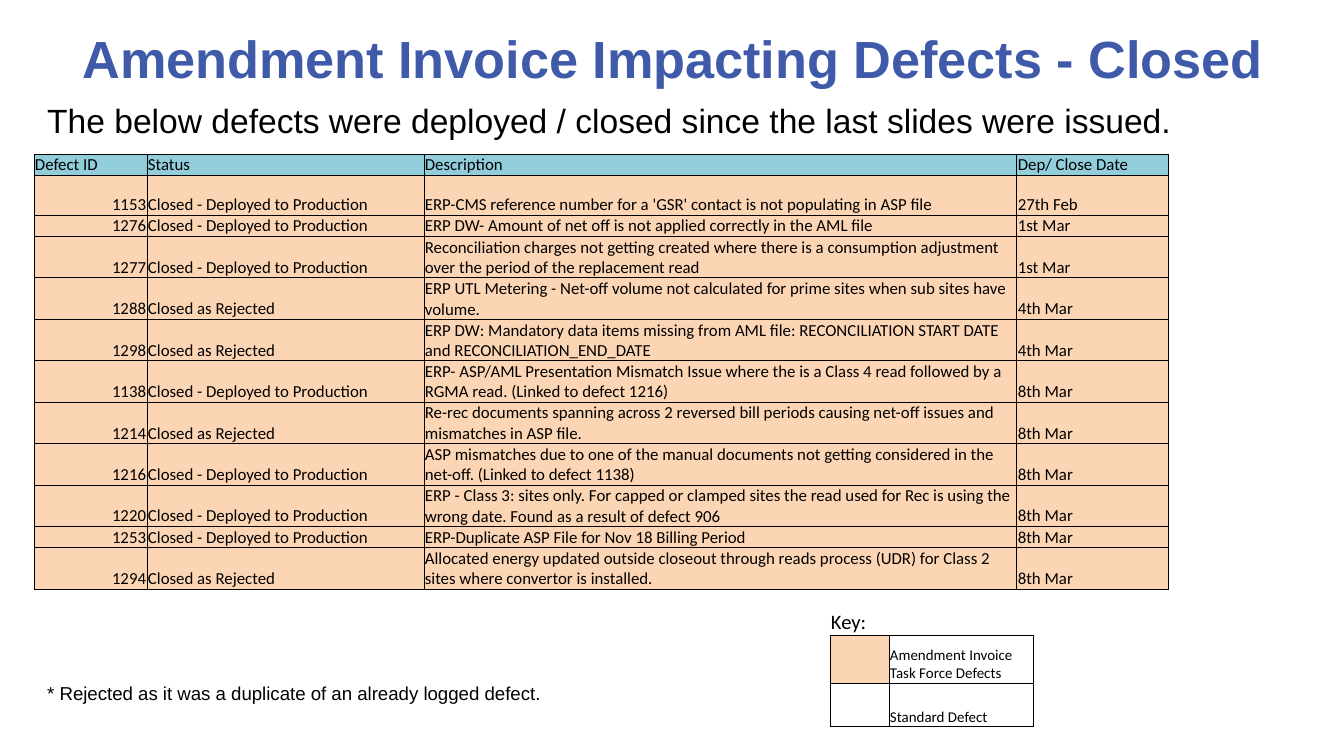
from lxml.etree import SubElement
from pptx import Presentation
from pptx.dml.color import RGBColor
from pptx.enum.text import MSO_ANCHOR, PP_ALIGN
from pptx.oxml.ns import qn
from pptx.util import Emu, Pt

PX = 914400 / 134.4
BLUE = RGBColor(0x3E, 0x5A, 0xA8)
BLACK = RGBColor(0, 0, 0)
WHITE = RGBColor(0xFF, 0xFF, 0xFF)
TEAL = RGBColor(0x92, 0xCD, 0xDC)
PEACH = RGBColor(0xFC, 0xD5, 0xB4)

TITLE = "Amendment Invoice Impacting Defects - Closed"
INTRO = "The below defects were deployed / closed since the last slides were issued."
FOOTNOTE = "* Rejected as it was a duplicate of an already logged defect."

DEPLOYED = "Closed - Deployed to Production"
REJECTED = "Closed as Rejected"
HEADER = ("Defect ID", "Status", "Description", "Dep/ Close Date")
DEFECTS = [
    ("1153", DEPLOYED, "ERP-CMS reference number for a 'GSR' contact is not populating in ASP file", "27th Feb"),
    ("1276", DEPLOYED, "ERP DW- Amount of net off is not applied correctly in the AML file", "1st Mar"),
    ("1277", DEPLOYED, "Reconciliation charges not getting created where there is a consumption "
     "adjustment over the period of the replacement read", "1st Mar"),
    ("1288", REJECTED, "ERP UTL Metering - Net-off volume not calculated for prime sites when "
     "sub sites have volume.", "4th Mar"),
    ("1298", REJECTED, "ERP DW: Mandatory data items missing from AML file: RECONCILIATION START DATE "
     "and RECONCILIATION_END_DATE", "4th Mar"),
    ("1138", DEPLOYED, "ERP- ASP/AML Presentation Mismatch Issue where the is a Class 4 read followed "
     "by a RGMA read. (Linked to defect 1216)", "8th Mar"),
    ("1214", REJECTED, "Re-rec documents spanning across 2 reversed bill periods causing net-off "
     "issues and mismatches in ASP file.", "8th Mar"),
    ("1216", DEPLOYED, "ASP mismatches due to one of the manual documents not getting considered in "
     "the net-off. (Linked to defect 1138)", "8th Mar"),
    ("1220", DEPLOYED, "ERP - Class 3: sites only. For capped or clamped sites the read used for Rec "
     "is using the wrong date. Found as a result of defect 906", "8th Mar"),
    ("1253", DEPLOYED, "ERP-Duplicate ASP File for Nov 18 Billing Period", "8th Mar"),
    ("1294", REJECTED, "Allocated energy updated outside closeout through reads process (UDR) for "
     "Class 2 sites where convertor is installed.", "8th Mar"),
]
DEFECT_COLS = (113, 277, 593, 152)
SHORT_ROWS = ("Defect ID", "1276", "1253")

KEY_ROWS = [("Key:", ""), ("", "Amendment Invoice Task Force Defects"), ("", "Standard Defect")]
KEY_COLS = (59, 144)
KEY_HEIGHTS = (26, 48, 44)


def px(n):
    return Emu(round(n * PX))


def style(p, size, font, color=BLACK, bold=False):
    for r in p.runs:
        r.font.size, r.font.name, r.font.bold = Pt(size), font, bold
        r.font.color.rgb = color


def add_text(slide, text, box, size, color=BLACK, bold=False, wrap=True):
    tf = slide.shapes.add_textbox(*map(px, box)).text_frame
    tf.word_wrap = wrap
    tf.text = text
    style(tf.paragraphs[0], size, "Arial", color, bold)
    return tf


def set_borders(cell, sides):
    """Draw a thin black line on the given sides and none on the others."""
    tc_pr = cell._tc.get_or_add_tcPr()
    for i, side in enumerate("LRTB"):
        ln = tc_pr.makeelement(qn(f"a:ln{side}"), {"w": str(Pt(0.5))})
        if side in sides:
            fill = SubElement(ln, qn("a:solidFill"))
            SubElement(fill, qn("a:srgbClr"), val=str(BLACK))
        else:
            SubElement(ln, qn("a:noFill"))
        tc_pr.insert(i, ln)


def fill_cell(cell, text, size, color, sides="LRTB"):
    cell.margin_left = cell.margin_right = cell.margin_top = px(1)
    cell.margin_bottom = 0
    cell.vertical_anchor = MSO_ANCHOR.BOTTOM
    p = cell.text_frame.paragraphs[0]
    if text:
        p.text = text
        style(p, size, "Calibri")
    else:
        SubElement(p._p, qn("a:endParaRPr"), sz=str(size * 100))
    if color is None:
        cell.fill.background()
    else:
        cell.fill.solid()
        cell.fill.fore_color.rgb = color
    set_borders(cell, sides)
    return p


def add_grid(slide, left, top, cols, heights):
    frame = slide.shapes.add_table(len(heights), len(cols), px(left), px(top),
                                   px(sum(cols)), px(sum(heights)))
    table = frame.table
    table.first_row = table.horz_banding = False
    for column, width in zip(table.columns, cols):
        column.width = px(width)
    for row, height in zip(table.rows, heights):
        row.height = px(height)
    return table


prs = Presentation()
prs.slide_width, prs.slide_height = px(1344), px(756)
slide = prs.slides.add_slide(prs.slide_layouts[6])

title = add_text(slide, TITLE, (34, 5, 1277, 106), 28, BLUE, bold=True)
title.margin_left = title.margin_right = title.margin_top = title.margin_bottom = 0
title.vertical_anchor = MSO_ANCHOR.MIDDLE
title.paragraphs[0].alignment = PP_ALIGN.CENTER
add_text(slide, INTRO, (34, 93, 1277, 52), 18)

key = add_grid(slide, 830, 609, KEY_COLS, KEY_HEIGHTS)
for i, row in enumerate(KEY_ROWS):
    for j, text in enumerate(row):
        if i == 0:
            fill_cell(key.cell(i, j), text, 11, None, sides="B")
        else:
            fill_cell(key.cell(i, j), text, 8, PEACH if (i, j) == (1, 0) else WHITE)

add_text(slide, FOOTNOTE, (34, 675, 523, 36), 10, wrap=False)

rows = [HEADER] + DEFECTS
heights = [21 if row[0] in SHORT_ROWS else 40 for row in rows]
defects = add_grid(slide, 34, 154, DEFECT_COLS, heights)
for i, row in enumerate(rows):
    for j, text in enumerate(row):
        p = fill_cell(defects.cell(i, j), text, 9, PEACH if i else TEAL)
        if i and j == 0:
            p.alignment = PP_ALIGN.RIGHT

prs.save("out.pptx")
